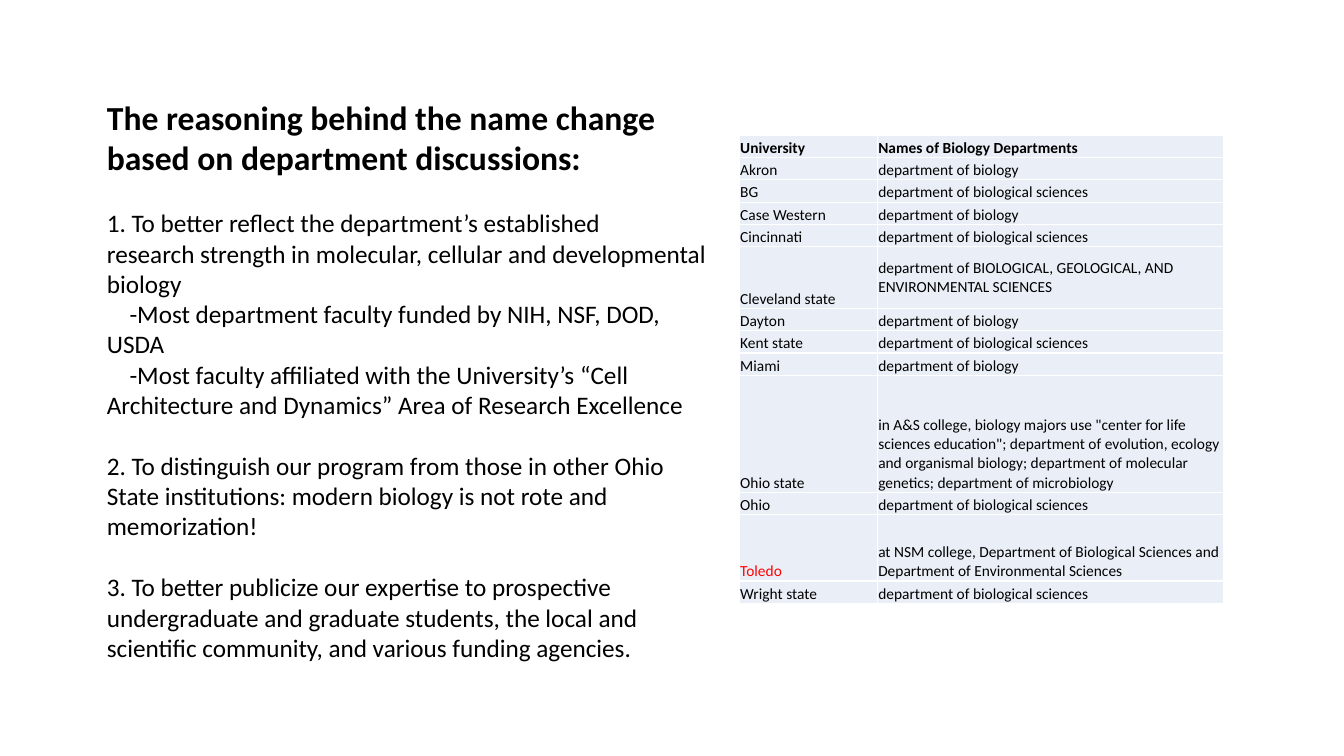
from pptx import Presentation
from pptx.dml.color import RGBColor
from pptx.enum.text import MSO_ANCHOR, MSO_AUTO_SIZE, PP_ALIGN
from pptx.oxml import parse_xml
from pptx.oxml.ns import nsdecls
from pptx.util import Inches, Pt

TOP, MIDDLE, BOTTOM = MSO_ANCHOR.TOP, MSO_ANCHOR.MIDDLE, MSO_ANCHOR.BOTTOM
LEFT, FIXED = PP_ALIGN.LEFT, MSO_AUTO_SIZE.NONE

WIDE, HIGH = 160, 90  # grid columns and rows of the slide
SHORT = 2.66  # grid rows in a one-line table row

TITLE = "The reasoning behind the name change\vbased on department discussions:"

# Text, space before in points, first-line indent in grid columns
POINTS = [
    ("1. To better reflect the department’s established\v"
     "research strength in molecular, cellular and developmental biology", 0, 0),
    ("-Most department faculty funded by NIH, NSF, DOD, USDA", 0, 2.7),
    ("-Most faculty affiliated with the University’s “Cell Architecture and "
     "Dynamics” Area of Research Excellence", 0, 2.7),
    ("2. To distinguish our program from those in other Ohio\v"
     "State institutions: modern biology is not rote and memorization!", 22, 0),
    ("3. To better publicize our expertise to prospective undergraduate and "
     "graduate students, the local and scientific community, and various "
     "funding agencies.", 22, 0),
]

BIO, SCI = "department of biology", "department of biological sciences"
NAMES = [
    ("University", "Names of Biology Departments"),
    ("Akron", BIO),
    ("BG", SCI),
    ("Case Western", BIO),
    ("Cincinnati", SCI),
    ("Cleveland state",
     "department of BIOLOGICAL, GEOLOGICAL, AND ENVIRONMENTAL SCIENCES"),
    ("Dayton", BIO),
    ("Kent state", SCI),
    ("Miami", BIO),
    ("Ohio state",
     'in A&S college, biology majors use "center for life sciences education"; '
     "department of evolution, ecology and organismal biology; department of "
     "molecular genetics; department of microbiology"),
    ("Ohio", SCI),
    ("Toledo", "at NSM college, Department of Biological Sciences and "
               "Department of Environmental Sciences"),
    ("Wright state", SCI),
]
TALL = {"Cleveland state": 7.32, "Ohio state": 13.92, "Toledo": 7.92}


def rgb(code):
    return RGBColor.from_string(code)


def apply(item, form):
    for key, value in form.items():
        setattr(item, key, value)


class Page:
    face, ink, accent, pale, edge = "Calibri", "000000", "FF0000", "EAEFF7", "FFFFFF"
    frame = {"word_wrap": True, "auto_size": FIXED, "vertical_anchor": TOP}
    inset = {"margin_left": Inches(0.01), "margin_right": Inches(0.01),
             "margin_top": Inches(0.01), "margin_bottom": 0}

    def __init__(self, deck):
        self.deck = deck
        self.slide = deck.slides.add_slide(deck.slide_layouts[1])

    def x(self, cols):
        return int(self.deck.slide_width * cols / WIDE)

    def y(self, rows):
        return int(self.deck.slide_height * rows / HIGH)

    def box(self, left, top, width, height):
        return self.x(left), self.y(top), self.x(width), self.y(height)

    def style(self, para, size, bold=False, color=None):
        apply(para.font, {"name": self.face, "size": Pt(size), "bold": bold})
        para.font.color.rgb = rgb(color or self.ink)

    def place(self, shape, area):
        apply(shape, dict(zip(("left", "top", "width", "height"), self.box(*area))))
        apply(shape.text_frame, self.frame)
        return shape.text_frame

    def title(self, text, area):
        frame = self.place(self.slide.shapes.title, area)
        frame.text = text
        para = frame.paragraphs[0]
        para.alignment = LEFT
        self.style(para, 24, True)

    def body(self, points, area):
        frame = self.place(self.slide.placeholders[1], area)
        for n, (text, gap, indent) in enumerate(points):
            para = frame.add_paragraph() if n else frame.paragraphs[0]
            apply(para, {"text": text, "alignment": LEFT, "space_before": Pt(gap)})
            self.style(para, 18)
            # Plain paragraph with a first-line indent
            props = para._p.get_or_add_pPr()
            props.set("marL", "0")
            props.set("indent", str(self.x(indent)))
            props.append(parse_xml(f"<a:buNone {nsdecls('a')}/>"))

    def cell(self, cell, text, anchor, bold, color):
        apply(cell, {"text": text, "vertical_anchor": anchor, **self.inset})
        self.style(cell.text_frame.paragraphs[0], 11, bold, color)
        # Borders come before the fill
        props = cell._tc.get_or_add_tcPr()
        for side in "LRTB":
            props.append(parse_xml(
                f'<a:ln{side} {nsdecls("a")} w="12700"><a:solidFill>'
                f'<a:srgbClr val="{self.edge}"/></a:solidFill></a:ln{side}>'))
        cell.fill.solid()
        cell.fill.fore_color.rgb = rgb(self.pale)

    def table(self, rows, widths, left, top):
        highs = [TALL.get(row[0], SHORT) for row in rows]
        area = self.box(left, top, sum(widths), sum(highs))
        grid = self.slide.shapes.add_table(len(rows), len(widths), *area).table
        apply(grid, {"first_row": False, "horz_banding": False})
        for col, width in zip(grid.columns, widths):
            col.width = self.x(width)
        for r, (row, high) in enumerate(zip(rows, highs)):
            grid.rows[r].height = self.y(high)
            for c, text in enumerate(row):
                anchor = MIDDLE if c and row[0] == "Cleveland state" else BOTTOM
                color = self.accent if text == "Toledo" else self.ink
                self.cell(grid.cell(r, c), text, anchor, r == 0, color)


def main():
    deck = Presentation()
    deck.slide_width, deck.slide_height = Inches(13.33), Inches(7.5)
    page = Page(deck)

    # Reasons on the left
    page.title(TITLE, (11.52, 10.92, 75.5, 10.8))
    page.body(POINTS, (11.52, 24.12, 75.5, 55.92))

    # Department names on the right
    page.table(NAMES, (16.44, 41.28), 88, 16.08)

    deck.save("out.pptx")


if __name__ == "__main__":
    main()
